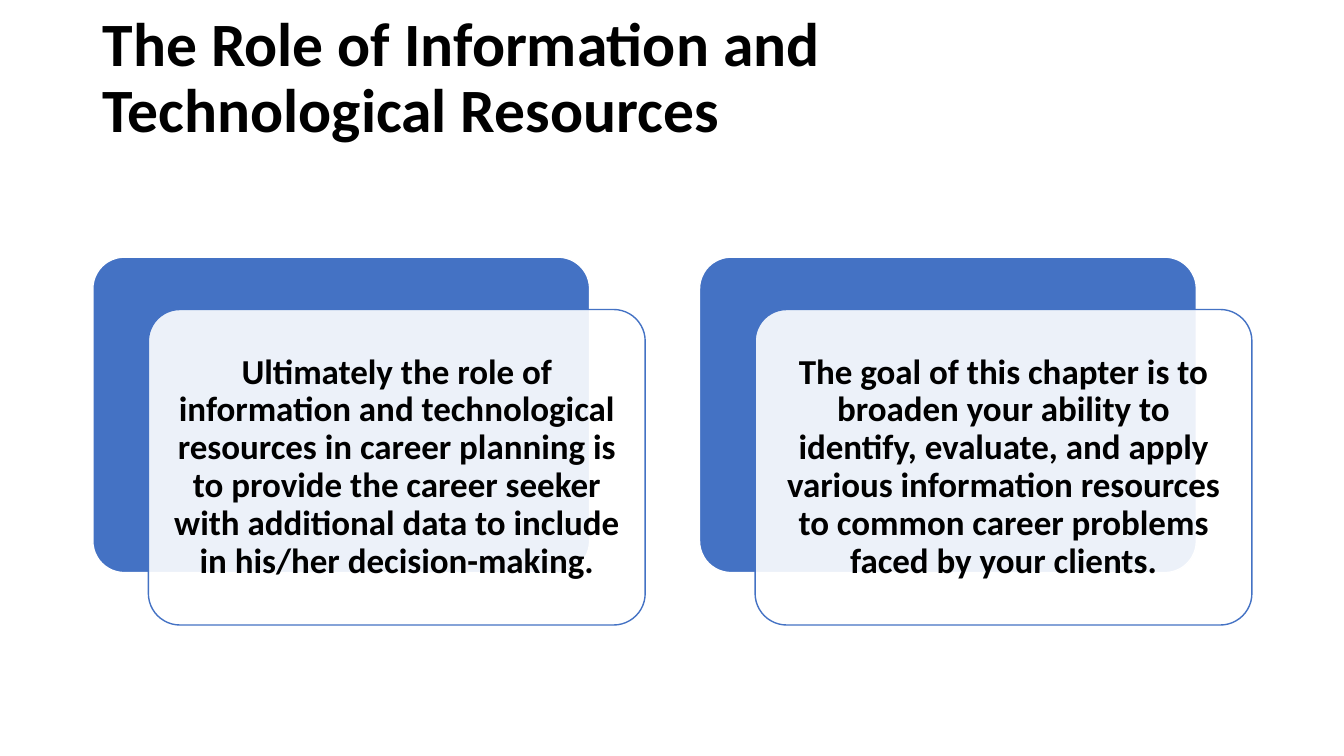
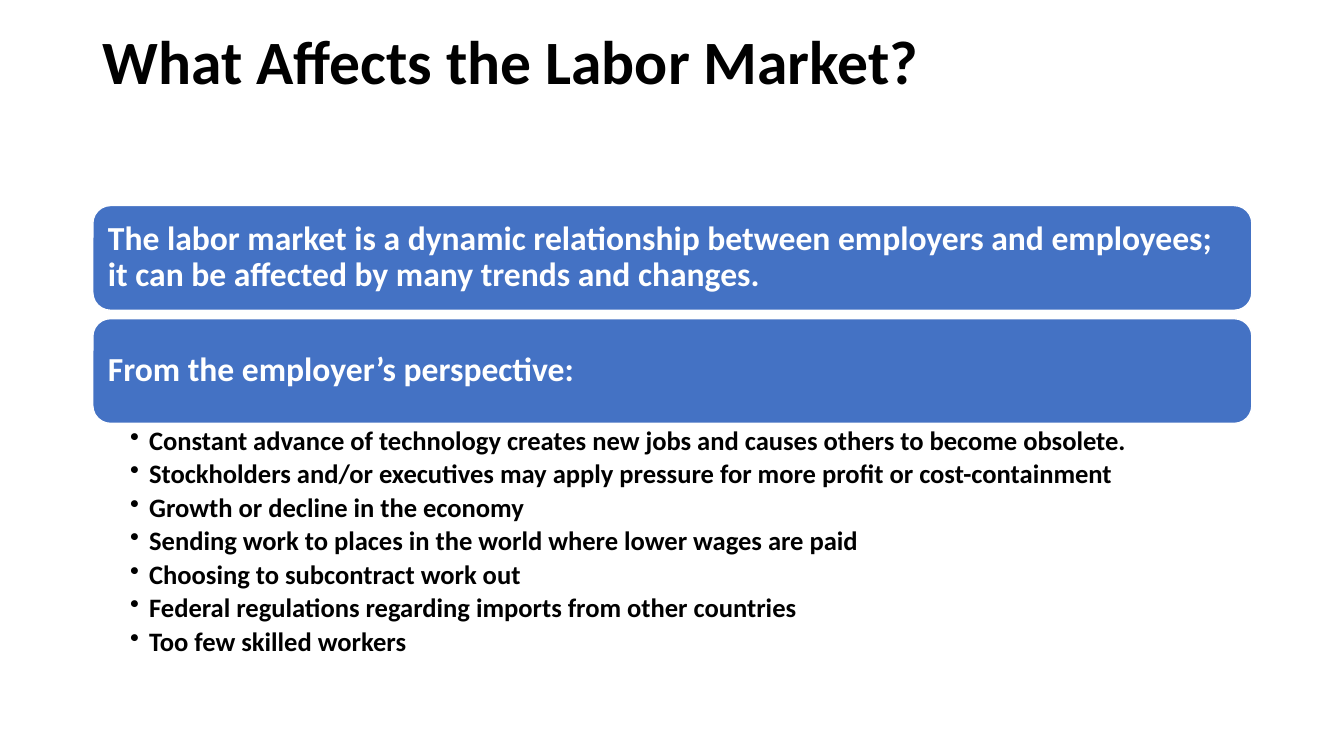
from dataclasses import dataclass

from lxml.etree import SubElement as Sub
from pptx import Presentation
from pptx.dml.color import RGBColor as Rgb
from pptx.enum.shapes import MSO_SHAPE as Shape
from pptx.enum.text import MSO_ANCHOR as Anchor, MSO_AUTO_SIZE as Fit, PP_ALIGN as Align
from pptx.oxml.ns import qn
from pptx.util import Cm, Pt


@dataclass(frozen=True)
class Theme:
    font: str = "Calibri"
    ink: Rgb = Rgb(0, 0, 0)
    white: Rgb = Rgb(255, 255, 255)
    blue: Rgb = Rgb(0x44, 0x72, 0xC4)
    title: float = 44
    card: float = 25
    bar: float = 24
    point: float = 19
    left: float = 2.34
    width: float = 29.21


LOOK = Theme()

CARDS = (
    "Ultimately the role of information and technological resources in career planning is "
    "to provide the career seeker with additional data to include in his/her decision-making.",
    "The goal of this chapter is to broaden your ability to identify, evaluate, and apply "
    "various information resources to common career problems faced by your clients.",
)
BARS = (
    "The labor market is a dynamic relationship between employers and employees; "
    "it can be affected by many trends and changes.",
    "From the employer’s perspective:",
)
POINTS = (
    "Constant advance of technology creates new jobs and causes others to become obsolete.",
    "Stockholders and/or executives may apply pressure for more profit or cost-containment",
    "Growth or decline in the economy",
    "Sending work to places in the world where lower wages are paid",
    "Choosing to subcontract work out",
    "Federal regulations regarding imports from other countries",
    "Too few skilled workers",
)


def style(para, size, color, align=Align.LEFT):
    para.alignment = align
    para.line_spacing = 0.9
    font = para.font
    font.name = LOOK.font
    font.size = Pt(size)
    font.bold = True
    font.color.rgb = color


def set_frame(frame, anchor, pads):
    frame.word_wrap = True
    frame.auto_size = Fit.NONE
    frame.vertical_anchor = anchor
    (frame.margin_left, frame.margin_top,
     frame.margin_right, frame.margin_bottom) = map(Cm, pads)


def add_page(deck, text, height):
    page = deck.slides.add_slide(deck.slide_layouts[5])
    title = page.shapes.title
    title.left, title.top = Cm(LOOK.left), Cm(0.17)
    title.width, title.height = Cm(LOOK.width), Cm(height)
    frame = title.text_frame
    set_frame(frame, Anchor.MIDDLE, (0.25, 0.13, 0.25, 0.13))
    frame.text = text
    style(frame.paragraphs[0], LOOK.title, LOOK.ink)
    return page


def add_box(page, place, fill, line, curve):
    box = page.shapes.add_shape(Shape.ROUNDED_RECTANGLE, *map(Cm, place))
    box.adjustments[0] = curve
    box.shadow.inherit = False
    box.fill.solid()
    box.fill.fore_color.rgb = fill
    box.line.color.rgb = line
    box.line.width = Pt(1)
    return box


def fill_text(box, text, size, color, align=Align.LEFT):
    frame = box.text_frame
    set_frame(frame, Anchor.MIDDLE, (0.25,) * 4)
    frame.text = text
    style(frame.paragraphs[0], size, color, align)


def add_card(page, left, text):
    top, width, height = 6.48, 12.52, 7.95
    add_box(page, (left, top, width, height), LOOK.blue, LOOK.white, 0.1)
    front = add_box(page, (left + 1.4, top + 1.32, width, height),
                    LOOK.white, LOOK.blue, 0.1)
    tint = front.element.spPr.find(f"{qn('a:solidFill')}/{qn('a:srgbClr')}")
    Sub(tint, qn("a:alpha"), val="90000")
    fill_text(front, text, LOOK.card, LOOK.ink, Align.CENTER)


def add_bar(page, top, text):
    bar = add_box(page, (LOOK.left, top, LOOK.width, 2.64),
                  LOOK.blue, LOOK.white, 0.17)
    fill_text(bar, text, LOOK.bar, LOOK.white)


def add_list(page, top, items):
    box = page.shapes.add_textbox(*map(Cm, (LOOK.left, top, LOOK.width, 6.35)))
    frame = box.text_frame
    set_frame(frame, Anchor.TOP, (0.94, 0.08, 0.48, 0.08))
    frame.text = "\n".join(items)
    for para in frame.paragraphs:
        props = para._p.get_or_add_pPr()
        props.set("marL", str(Cm(0.48)))
        props.set("indent", str(-Cm(0.48)))
        Sub(props, qn("a:buChar"), char="•")
        style(para, LOOK.point, LOOK.ink)
        para.space_after = Pt(3.4)


def main():
    deck = Presentation()
    deck.slide_width, deck.slide_height = Cm(33.87), Cm(19.05)

    page = add_page(deck, "The Role of Information and\vTechnological Resources", 3.68)
    for i, text in enumerate(CARDS):
        add_card(page, LOOK.left + i * 15.29, text)

    page = add_page(deck, "What Affects the Labor Market?", 2.92)
    for i, text in enumerate(BARS):
        add_bar(page, 5.18 + i * 2.85, text)
    add_list(page, 10.69, POINTS)

    deck.save("out.pptx")


if __name__ == "__main__":
    main()
